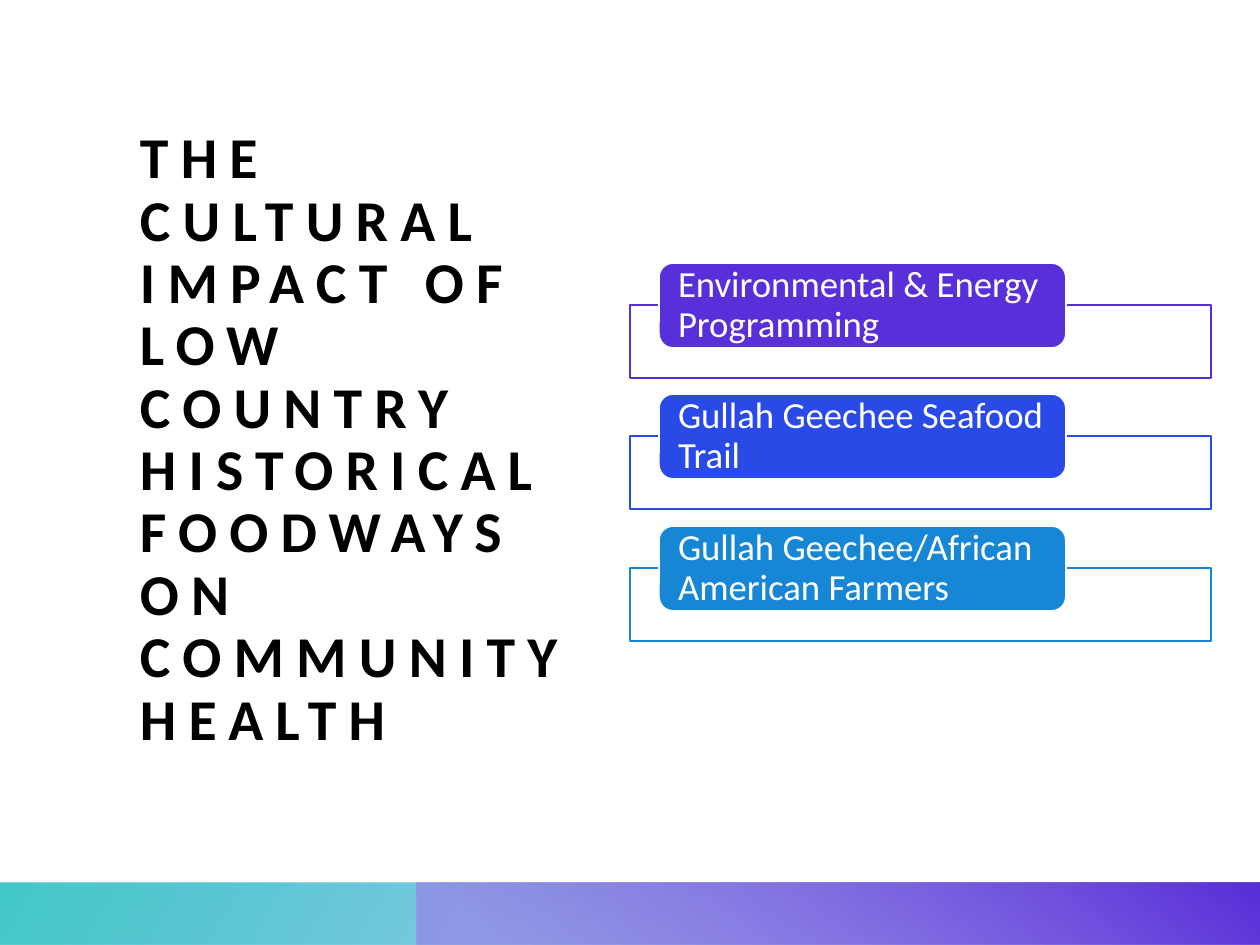
from lxml import etree
from pptx import Presentation
from pptx import util as u
from pptx.dml.color import RGBColor
from pptx.enum import shapes, text
from pptx.oxml import parse_xml
from pptx.oxml.ns import nsdecls, qn

PX = 914400 // 126  # EMU per px
FONT = "Calibri"
TOPICS = [
    ("Environmental & Energy Programming", "592FD9"),
    ("Gullah Geechee Seafood Trail", "294AE7"),
    ("Gullah Geechee/African American Farmers", "1787D5"),
]


def px(*lengths):
    return [u.Emu(length * PX) for length in lengths]


def rgb(value):
    return RGBColor.from_string(value)


def add_box(slide, kind, at, fill=None, line=None):
    box = slide.shapes.add_shape(kind, *px(*at))
    box.shadow.inherit = False
    if fill:
        box.fill.solid()
        box.fill.fore_color.rgb = rgb(fill)
    if line:
        box.line.color.rgb = rgb(line)
        box.line.width = u.Pt(1)
    else:
        box.line.fill.background()
    return box


def write(frame, words, size, color, inset=0, bold=False, spacing=0):
    frame.text = words
    frame.word_wrap = True
    frame.margin_left, frame.margin_right = px(inset, inset)
    frame.margin_top = frame.margin_bottom = 0
    paragraph = frame.paragraphs[0]
    paragraph.alignment = text.PP_ALIGN.LEFT
    paragraph.line_spacing = 0.9
    run = paragraph.runs[0]
    run.font.name, run.font.size, run.font.bold = FONT, u.Pt(size), bold
    run.font.color.rgb = rgb(color)
    if spacing:
        run.font._element.set("spc", str(spacing * 100))


def add_gradient_bar(slide, at, stops, angle, rotation=0):
    """Stops are (position %, colour, opacity %)."""
    bar = add_box(slide, shapes.MSO_SHAPE.RECTANGLE, at)
    bar.rotation = rotation
    properties = bar._element.spPr
    properties.find(qn("a:xfrm")).set("flipH", "1")
    gradient = parse_xml(
        f'<a:gradFill {nsdecls("a")} rotWithShape="1"><a:gsLst/>'
        f'<a:lin ang="{angle * 60000}" scaled="0"/></a:gradFill>')
    for position, color, opacity in stops:
        stop = etree.SubElement(gradient[0], qn("a:gs"), pos=str(position * 1000))
        tint = etree.SubElement(stop, qn("a:srgbClr"), val=color)
        etree.SubElement(tint, qn("a:alpha"), val=str(opacity * 1000))
    properties.find(qn("a:prstGeom")).addnext(gradient)


def add_topic(slide, top, label, color):
    add_box(slide, shapes.MSO_SHAPE.RECTANGLE, (630, top + 42, 581, 73), "FFFFFF", color)
    tag = add_box(slide, shapes.MSO_SHAPE.ROUNDED_RECTANGLE,
                  (659, top, 407, 85), color, "FFFFFF")
    tag.text_frame.vertical_anchor = text.MSO_ANCHOR.MIDDLE
    write(tag.text_frame, label, 21, "FFFFFF", inset=15)


def main():
    deck = Presentation()
    deck.slide_width, deck.slide_height = u.Inches(10), u.Inches(7.5)
    slide = deck.slides.add_slide(deck.slide_layouts[6])

    # Title
    title = slide.shapes.add_textbox(*px(140, 129, 475, 629))
    write(title.text_frame,
          "THE CULTURAL IMPACT OF LOW COUNTRY HISTORICAL FOODWAYS ON COMMUNITY HEALTH",
          33, "000000", bold=True, spacing=7)

    # Footer band
    add_gradient_bar(slide, (0, 883, 1260, 62),
                     [(14, "1787D5", 28), (100, "22BFBE", 85)], 150, rotation=180)
    add_gradient_bar(slide, (417, 883, 843, 62),
                     [(9, "9B82E8", 68), (99, "592FD9", 100)], 230)

    # Topics, one every 131.5 px
    for index, (label, color) in enumerate(TOPICS):
        add_topic(slide, 263 + index * 263 // 2, label, color)

    deck.save("out.pptx")


if __name__ == "__main__":
    main()
